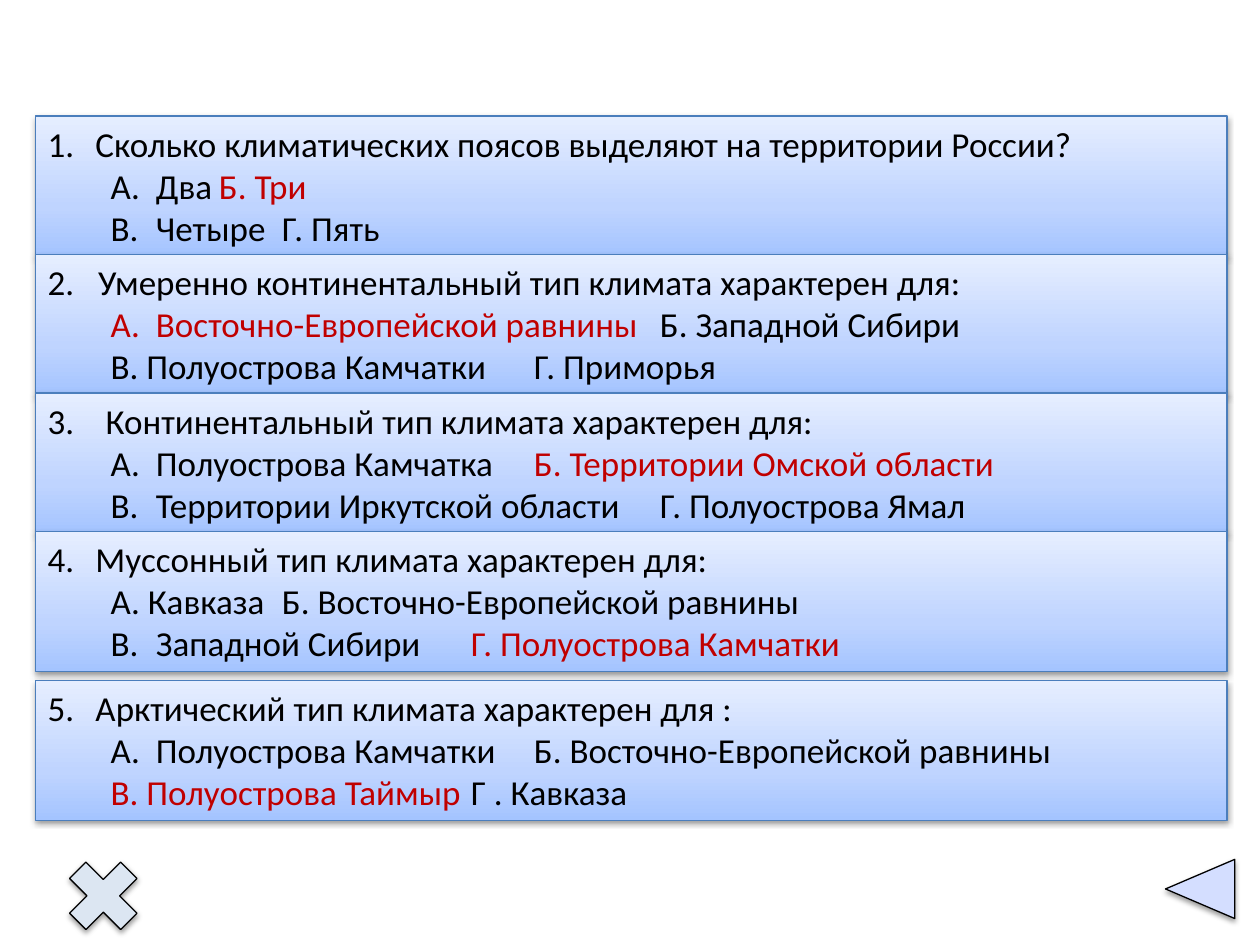
from lxml.etree import SubElement
from pptx import Presentation
from pptx.dml.color import RGBColor
from pptx.enum.shapes import MSO_SHAPE
from pptx.enum.text import MSO_ANCHOR, MSO_AUTO_SIZE, PP_ALIGN
from pptx.oxml.ns import qn
from pptx.util import Emu, Inches, Pt

COLORS = {
    "text": "000000", "answer": "C00000", "outline": "000000",
    "panel_line": "4B7EBC", "cross": "DCE6F2",
}
PANEL_STOPS = [(0, "A4C4FF"), (35, "BFD4FF"), (100, "E6EEFF")]
ARROW_STOPS = [(53, "D4DEFF"), (83, "D4DEFF"), (100, "B9CDE5"), (100, "96AB94")]
PANEL_LEFT, PANEL_TOP, PANEL_WIDTH, PANEL_HEIGHT = 0.28, 0.92, 9.46, 1.11
ROW_STEP, LAST_ROW_GAP = 1.1, 0.08
NUMBER_HANG, OPTION_MARGIN = 0.38, 0.86
OPTION_START = 0.5

QUESTIONS = [
    ("Сколько климатических поясов выделяют на территории России?", 0.38, 2.25,
     ["А.\tДва", "Б. Три", "В.\tЧетыре", "Г. Пять"], 1),
    ("Умеренно континентальный тип климата характерен для:", 0.4, 5.0,
     ["А.\tВосточно-Европейской равнины", "Б. Западной Сибири",
      "В. Полуострова Камчатки", "Г. Приморья"], 0),
    ("Континентальный тип климата характерен для:", 0.46, 5.12,
     ["А.\tПолуострова Камчатка", "Б. Территории Омской области",
      "В.\tТерритории Иркутской области", "Г. Полуострова Ямал"], 1),
    ("Муссонный тип климата характерен для:", 0.38, 5.04,
     ["А. Кавказа", "Б. Восточно-Европейской равнины",
      "В.\tЗападной Сибири", "Г. Полуострова Камчатки"], 3),
    ("Арктический тип климата характерен для :", 0.38, 5.13,
     ["А.\tПолуострова Камчатки", "Б. Восточно-Европейской равнины",
      "В. Полуострова Таймыр", "Г . Кавказа"], 2),
]


def rgb(name):
    return RGBColor.from_string(COLORS[name])


def add_block(slide, preset, left, top, width, height, line="outline"):
    block = slide.shapes.add_shape(
        preset, Inches(left), Inches(top), Inches(width), Inches(height))
    block.line.color.rgb = rgb(line)
    block.line.width = Pt(0.75)
    block.shadow.inherit = False
    effects = block._element.spPr.find(qn("a:effectLst"))
    shadow = SubElement(effects, qn("a:outerShdw"), blurRad=str(Pt(3.1)),
                        dist=str(Pt(1.6)), dir="5400000", rotWithShape="0")
    shade = SubElement(shadow, qn("a:srgbClr"), val="000000")
    SubElement(shade, qn("a:alpha"), val="38000")
    return block


def fill_gradient(block, stops, angle):
    block.fill.gradient()
    block.fill.gradient_angle = angle
    stop_list = block._element.spPr.find(qn("a:gradFill")).find(qn("a:gsLst"))
    for old_stop in list(stop_list):
        stop_list.remove(old_stop)
    for position, color in stops:
        stop = SubElement(stop_list, qn("a:gs"), pos=str(position * 1000))
        SubElement(stop, qn("a:srgbClr"), val=color)


def write_text(paragraph, text, color="text", size=20, font="Calibri"):
    run = paragraph.add_run()
    run.text = text
    run.font.size = Pt(size)
    run.font.name = font
    run.font.color.rgb = rgb(color)


def indent(paragraph, margin, first):
    paragraph.alignment = PP_ALIGN.LEFT
    properties = paragraph._p.get_or_add_pPr()
    properties.set("marL", str(Inches(margin)))
    properties.set("indent", str(Emu(Inches(first) - Inches(margin))))
    return properties


def add_question(slide, number, top, title, title_margin, second_column, options, answer):
    panel = add_block(slide, MSO_SHAPE.RECTANGLE, PANEL_LEFT, top,
                      PANEL_WIDTH, PANEL_HEIGHT, line="panel_line")
    fill_gradient(panel, PANEL_STOPS, 90)
    frame = panel.text_frame
    frame.word_wrap = True
    frame.auto_size = MSO_AUTO_SIZE.SHAPE_TO_FIT_TEXT
    frame.vertical_anchor = MSO_ANCHOR.TOP

    heading = frame.paragraphs[0]
    properties = indent(heading, title_margin, 0)
    SubElement(properties, qn("a:buFont"), typeface="+mj-lt")
    SubElement(properties, qn("a:buAutoNum"), type="arabicPeriod", startAt=str(number))
    write_text(heading, title)

    for start in (0, 2):
        row = frame.add_paragraph()
        row.level = 1
        properties = indent(row, OPTION_MARGIN, OPTION_START)
        tabs = SubElement(properties, qn("a:tabLst"))
        for stop in (OPTION_MARGIN, second_column):
            SubElement(tabs, qn("a:tab"), pos=str(Inches(stop)), algn="l")
        for index in (start, start + 1):
            lead = "\t" if index > start else ""
            write_text(row, lead + options[index],
                       color="answer" if index == answer else "text")


def add_navigation(slide):
    cross = add_block(slide, MSO_SHAPE.MATH_MULTIPLY, 0.43, 6.72, 0.78, 0.78)
    cross.fill.solid()
    cross.fill.fore_color.rgb = rgb("cross")
    back = add_block(slide, MSO_SHAPE.PENTAGON, 9.25, 6.82, 0.55, 0.47)
    back.adjustments[0] = 1.17
    back.rotation = 180
    fill_gradient(back, ARROW_STOPS, 315)


def main():
    deck = Presentation()
    deck.slide_width, deck.slide_height = Inches(10), Inches(7.5)
    slide = deck.slides.add_slide(deck.slide_layouts[6])
    add_navigation(slide)
    for row, question in enumerate(QUESTIONS):
        gap = LAST_ROW_GAP if row == len(QUESTIONS) - 1 else 0
        add_question(slide, row + 1, PANEL_TOP + row * ROW_STEP + gap, *question)
    deck.save("out.pptx")


if __name__ == "__main__":
    main()
